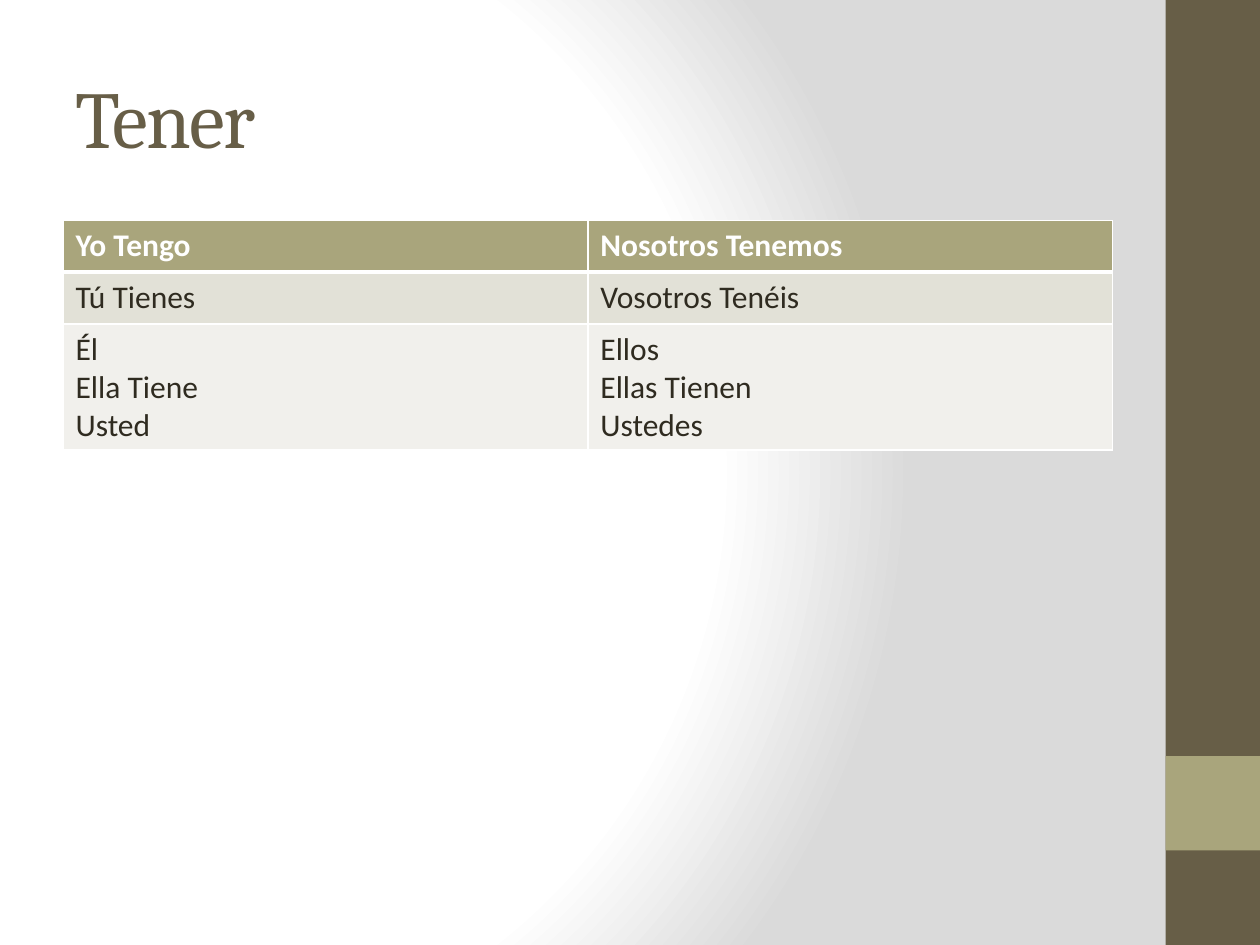
from lxml import etree
from pptx import Presentation
from pptx.dml.color import RGBColor
from pptx.enum.shapes import MSO_SHAPE
from pptx.enum.text import MSO_ANCHOR
from pptx.oxml import parse_xml
from pptx.oxml.ns import nsdecls, qn
from pptx.util import Pt

PX = 9144  # 100 px to the inch
COLORS = {
    "brown": "675E47",
    "olive": "A9A57C",
    "band": "E2E1D7",
    "pale": "F1F0EC",
    "text": "2F2B20",
    "white": "FFFFFF",
    "gray": "DADADA",
}
ROWS = [
    ("Yo Tengo", "Nosotros Tenemos"),
    ("Tú Tienes", "Vosotros Tenéis"),
    ("Él\nElla Tiene\nUsted", "Ellos\nEllas Tienen\nUstedes"),
]
ROW_STYLES = [("olive", "white", 41), ("band", "text", 41), ("pale", "text", 99)]


def format_run(r, font, size, color, bold=False):
    r.font.name = font
    r.font.size = Pt(size)
    r.font.bold = bold
    r.font.color.rgb = RGBColor.from_string(COLORS[color])


def add_border(cell, side, width):
    """Draw a white line on one side (L, R, T or B) of a cell."""
    tcPr = cell._tc.get_or_add_tcPr()
    ln = etree.Element(qn(f"a:ln{side}"), w=str(Pt(width)))
    fill = etree.SubElement(ln, qn("a:solidFill"))
    etree.SubElement(fill, qn("a:srgbClr"), val=COLORS["white"])
    tcPr.append(ln)


prs = Presentation()
prs.slide_width = 1000 * PX
prs.slide_height = 750 * PX
s = prs.slides.add_slide(prs.slide_layouts[6])

# Background: radial gradient from white to gray
s.background.fill.solid()
bgPr = s.background._cSld.bg.bgPr
stops = "".join(
    f'<a:gs pos="{pos * 1000}"><a:srgbClr val="{COLORS[color]}"/></a:gs>'
    for pos, color in [(0, "white"), (75, "white"), (100, "gray")]
)
bgPr.replace(bgPr[0], parse_xml(
    f'<a:gradFill {nsdecls("a")} rotWithShape="1"><a:gsLst>{stops}</a:gsLst>'
    '<a:path path="circle"><a:fillToRect l="20000" t="50000" r="100000" b="50000"/>'
    '</a:path></a:gradFill>'
))

# Side bar and its accent square
for top, height, color in [(0, 750, "brown"), (600, 75, "olive")]:
    sp = s.shapes.add_shape(MSO_SHAPE.RECTANGLE, 925 * PX, top * PX, 75 * PX, height * PX)
    sp.shadow.inherit = False
    sp.fill.solid()
    sp.fill.fore_color.rgb = RGBColor.from_string(COLORS[color])
    sp.line.fill.background()

# Title
tf = s.shapes.add_textbox(50 * PX, 30 * PX, 833 * PX, 125 * PX).text_frame
tf.word_wrap = True
tf.vertical_anchor = MSO_ANCHOR.MIDDLE
tf.text = "Tener"
r = tf.paragraphs[0].runs[0]
format_run(r, "Cambria", 46, "brown")
r._r.get_or_add_rPr().set("spc", "-100")

# Conjugation table
table = s.shapes.add_table(3, 2, 50 * PX, 175 * PX, 833 * PX, 181 * PX).table
for i, (texts, (fill, color, height)) in enumerate(zip(ROWS, ROW_STYLES)):
    table.rows[i].height = height * PX
    for j, text in enumerate(texts):
        cell = table.cell(i, j)
        cell.text_frame.text = text
        for p in cell.text_frame.paragraphs:
            format_run(p.runs[0], "Calibri", 18, color, bold=i == 0)
        for side in "LRTB":
            header_rule = (i, side) in [(0, "B"), (1, "T")]
            add_border(cell, side, 3 if header_rule else 1)
        cell.fill.solid()
        cell.fill.fore_color.rgb = RGBColor.from_string(COLORS[fill])

prs.save("out.pptx")
